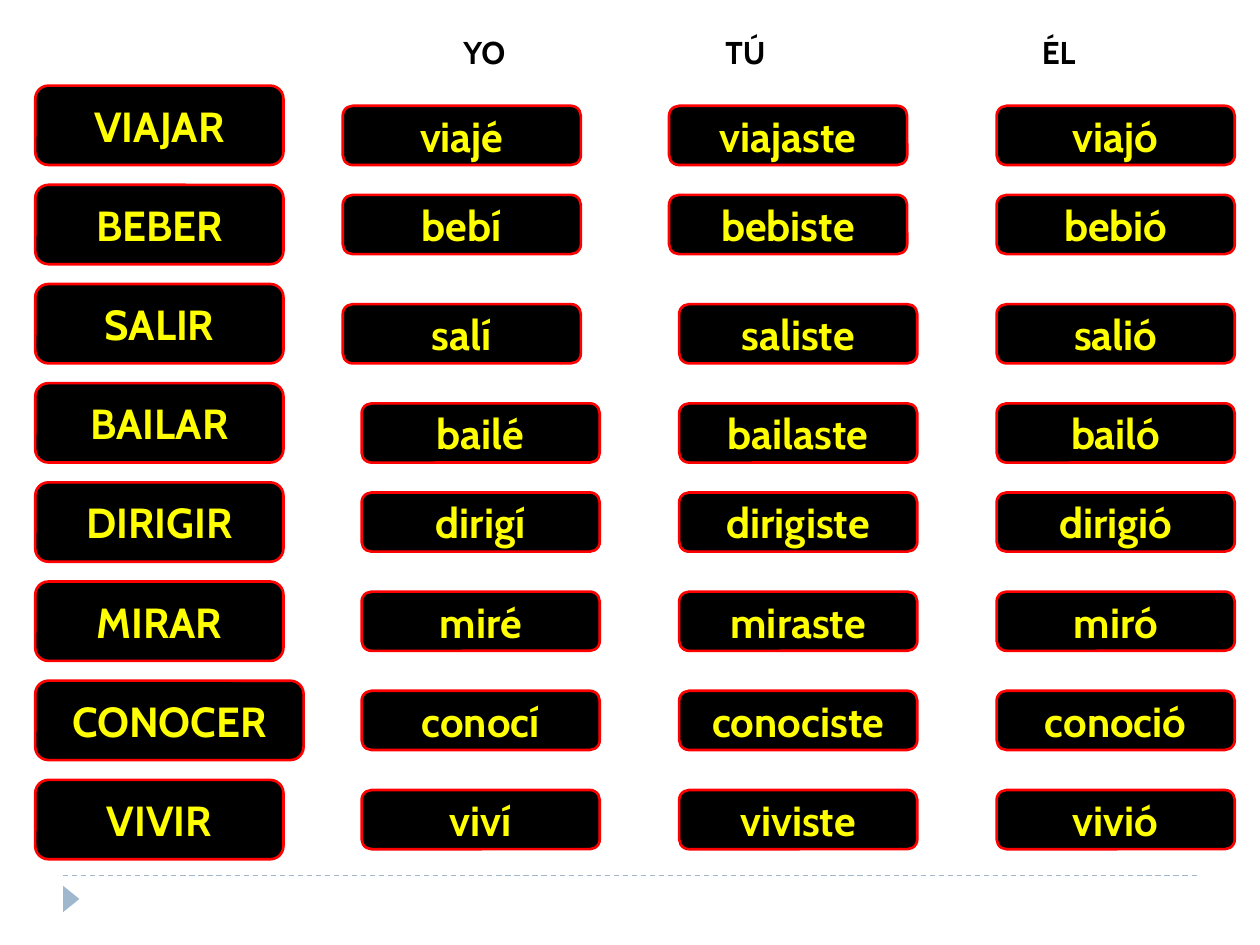
from dataclasses import dataclass

import pptx
import pptx.util
import pptx.dml.color
import pptx.enum.dml
import pptx.enum.shapes
import pptx.enum.text
import pptx.oxml
import pptx.oxml.ns

Inches = pptx.util.Inches
Pt = pptx.util.Pt
RGB = pptx.dml.color.RGBColor.from_string
SHAPE = pptx.enum.shapes.MSO_SHAPE


@dataclass(frozen=True)
class Theme:
    font: str = "Cabin"
    card_fill: str = "000000"
    card_line: str = "FF0000"
    card_text: str = "FFFF00"
    heading: str = "000000"
    accent: str = "9FB8CD"
    card_size: int = 24
    heading_size: int = 18
    card_line_width: float = 1.5
    rule_width: float = 0.75


THEME = Theme()

PRONOUNS = ["YO", "TÚ", "ÉL"]
PRONOUN_STOPS = [2.08, 4.59]
CONJUGATIONS = [
    ("VIAJAR", "viajé", "viajaste", "viajó"),
    ("BEBER", "bebí", "bebiste", "bebió"),
    ("SALIR", "salí", "saliste", "salió"),
    ("BAILAR", "bailé", "bailaste", "bailó"),
    ("DIRIGIR", "dirigí", "dirigiste", "dirigió"),
    ("MIRAR", "miré", "miraste", "miró"),
    ("CONOCER", "conocí", "conociste", "conoció"),
    ("VIVIR", "viví", "viviste", "vivió"),
]
BOTTOM_ALIGNED = {"VIAJAR", "SALIR", "BAILAR"}
WIDE_VERBS = {"CONOCER"}
VERB_HEIGHT = 0.63
FORM_WIDTH, FORM_HEIGHT = 1.89, 0.47


def add_run(paragraph, text, size, color):
    run = paragraph.add_run()
    run.text = text
    run.font.name = THEME.font
    run.font.size = Pt(size)
    run.font.bold = True
    run.font.color.rgb = RGB(color)


def add_card(slide, text, left, top, width, height):
    card = slide.shapes.add_shape(
        SHAPE.ROUNDED_RECTANGLE, Inches(left), Inches(top), Inches(width), Inches(height))
    card.shadow.inherit = False
    card.fill.solid()
    card.fill.fore_color.rgb = RGB(THEME.card_fill)
    card.line.color.rgb = RGB(THEME.card_line)
    card.line.width = Pt(THEME.card_line_width)
    card.text_frame.vertical_anchor = pptx.enum.text.MSO_ANCHOR.MIDDLE
    paragraph = card.text_frame.paragraphs[0]
    paragraph.alignment = pptx.enum.text.PP_ALIGN.CENTER
    add_run(paragraph, text, THEME.card_size, THEME.card_text)


def add_pronouns(slide, left, top, width, height):
    heading = slide.shapes.add_textbox(Inches(left), Inches(top), Inches(width), Inches(height))
    heading.text_frame.word_wrap = True
    paragraph = heading.text_frame.paragraphs[0]
    stops = pptx.oxml.parse_xml(f"<a:tabLst {pptx.oxml.ns.nsdecls('a')}/>")
    for position in PRONOUN_STOPS:
        stop = stops.makeelement(pptx.oxml.ns.qn("a:tab"), {"pos": str(Inches(position)), "algn": "l"})
        stops.append(stop)
    paragraph._p.get_or_add_pPr().append(stops)
    add_run(paragraph, "\t".join(PRONOUNS), THEME.heading_size, THEME.heading)


def add_conjugations(slide, left, top, width, height):
    pitch = (height - VERB_HEIGHT) / (len(CONJUGATIONS) - 1)
    for row, (verb, *forms) in enumerate(CONJUGATIONS):
        verb_top = top + row * pitch
        verb_width = 2.13 if verb in WIDE_VERBS else 1.97
        add_card(slide, verb, left, verb_top, verb_width, VERB_HEIGHT)

        slack = VERB_HEIGHT - FORM_HEIGHT
        form_top = verb_top + (slack if verb in BOTTOM_ALIGNED else slack / 2)
        yo_left = left + (2.44 if row < 3 else 2.59)
        tu_left = left + (5.03 if row < 2 else 5.11)
        el_left = left + width - FORM_WIDTH
        for form, form_left in zip(forms, (yo_left, tu_left, el_left)):
            add_card(slide, form, form_left, form_top, FORM_WIDTH, FORM_HEIGHT)


def add_footer(slide, left, top, width):
    rule = slide.shapes.add_connector(
        pptx.enum.shapes.MSO_CONNECTOR.STRAIGHT,
        Inches(left), Inches(top), Inches(left + width), Inches(top))
    rule.line.color.rgb = RGB(THEME.accent)
    rule.line.width = Pt(THEME.rule_width)
    rule.line.dash_style = pptx.enum.dml.MSO_LINE.DASH
    rule._element.spPr.append(
        pptx.oxml.parse_xml(f"<a:effectLst {pptx.oxml.ns.nsdecls('a')}/>"))

    marker = slide.shapes.add_shape(
        SHAPE.ISOSCELES_TRIANGLE,
        Inches(left - 0.04), Inches(top + 0.12), Inches(0.21), Inches(0.13))
    marker.rotation = 90
    marker.shadow.inherit = False
    marker.fill.solid()
    marker.fill.fore_color.rgb = RGB(THEME.accent)
    marker.line.fill.background()


def main():
    presentation = pptx.Presentation()
    presentation.slide_width = Inches(10)
    presentation.slide_height = Inches(7.5)
    slide = presentation.slides.add_slide(presentation.slide_layouts[6])
    add_footer(slide, 0.5, 6.95, 9)
    add_pronouns(slide, 3.58, 0.21, 6.16, 0.4)
    add_conjugations(slide, 0.28, 0.68, 9.52, 6.14)
    presentation.save("out.pptx")


if __name__ == "__main__":
    main()
